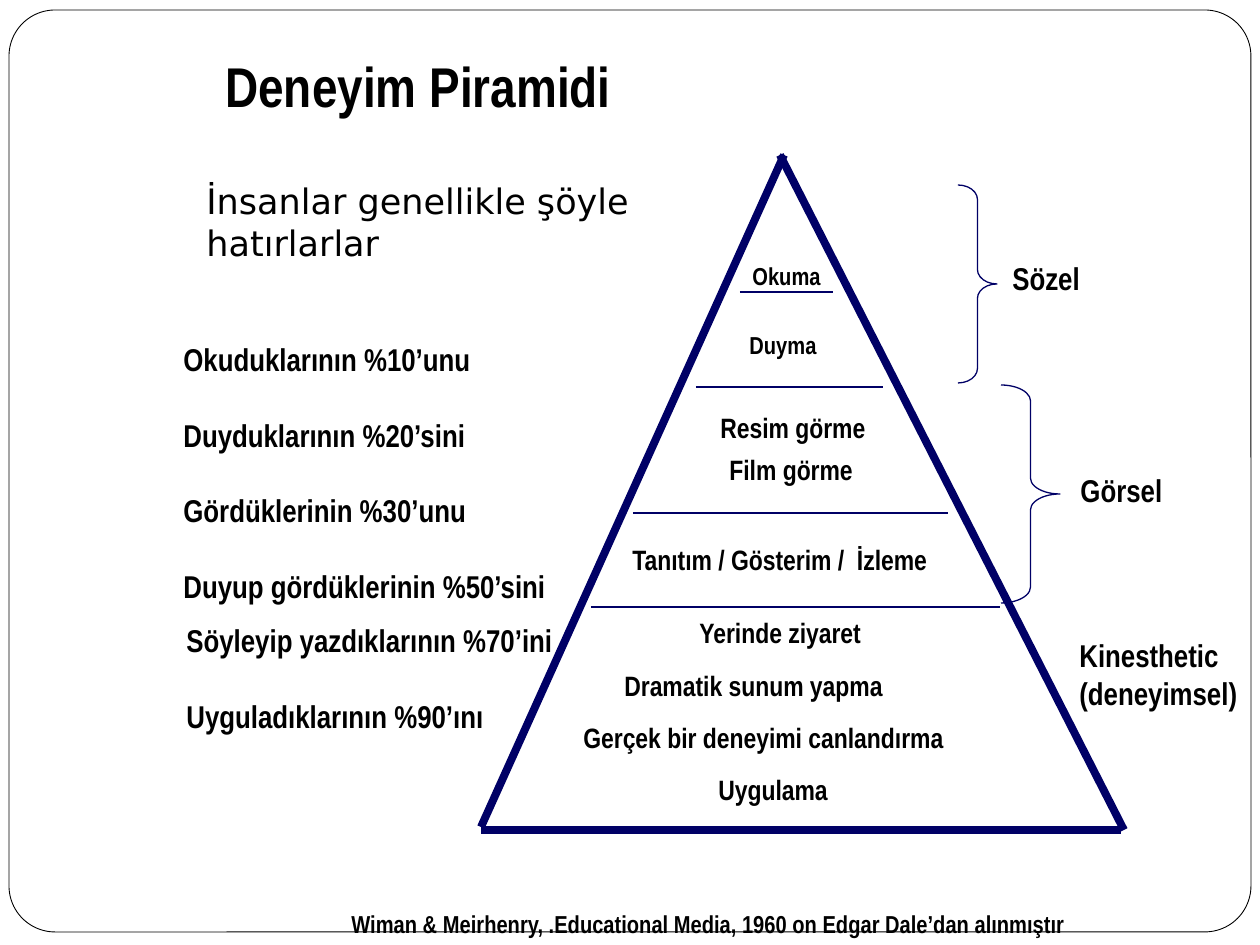
import pptx
import pptx.util
import pptx.dml.color
import pptx.enum.shapes
import pptx.enum.text
import pptx.oxml

SCALE = 914400 / 126  # EMU in one px
NAVY = "000066"
BLACK = "000000"
KIND = pptx.enum.shapes.MSO_SHAPE


def px(num):
    return pptx.util.Emu(round(num * SCALE))


def color(code):
    return pptx.dml.color.RGBColor.from_string(code)


def stroke(item, code, width):
    item.line.color.rgb = color(code)
    item.line.width = pptx.util.Pt(width)


def line(slide, start, end, width):
    item = slide.shapes.add_connector(
        pptx.enum.shapes.MSO_CONNECTOR.STRAIGHT, *map(px, start + end))
    stroke(item, NAVY, width)
    item._element.spPr.append(pptx.oxml.parse_xml(
        '<a:effectLst xmlns:a='
        '"http://schemas.openxmlformats.org/drawingml/2006/main"/>'))


def shape(slide, kind, area, code, width, adjust, fill=None):
    item = slide.shapes.add_shape(kind, *map(px, area))
    item.shadow.inherit = False
    for place, value in enumerate(adjust):
        item.adjustments[place] = value
    if fill:
        item.fill.solid()
        item.fill.fore_color.rgb = color(fill)
    else:
        item.fill.background()
    stroke(item, code, width)


def text(slide, area, rows, size, wrap=True, gap=0, font="Arial Narrow",
         bold=True, anchor="TOP"):
    frame = slide.shapes.add_textbox(*map(px, area)).text_frame
    frame.word_wrap = wrap
    frame.vertical_anchor = pptx.enum.text.MSO_ANCHOR[anchor]
    for place, words in enumerate(rows):
        para = frame.add_paragraph() if place else frame.paragraphs[0]
        if place:
            para.space_before = pptx.util.Pt(gap)
        run = para.add_run()
        run.text = words
        run.font.name = font
        run.font.size = pptx.util.Pt(size)
        run.font.bold = bold
        run.font.color.rgb = color(BLACK)


def main():
    deck = pptx.Presentation()
    deck.slide_width, deck.slide_height = px(1260), px(945)
    slide = deck.slides.add_slide(deck.slide_layouts[6])

    # Rounded frame
    shape(slide, KIND.ROUNDED_RECTANGLE, (9, 10, 1242, 922), BLACK, 0.5,
          [0.05], "FFFFFF")

    # Pyramid sides
    line(slide, (481, 830), (1121, 830), 4.5)
    line(slide, (1124, 830), (780, 155), 4.5)
    line(slide, (481, 827), (784, 155), 4.5)

    # Dividers between the levels
    for left, right, top in ((740, 833, 292), (696, 883, 387),
                             (633, 948, 513), (591, 1000, 607)):
        line(slide, (left, top), (right, top), 1)

    # Level labels
    for left, top, width, size, words in (
            (740, 255, 94, 14, "Okuma"),
            (737, 324, 93, 14, "Duyma"),
            (708, 404, 171, 16, "Resim görme"),
            (717, 446, 150, 16, "Film görme"),
            (620, 536, 323, 16, "Tanıtım / Gösterim /  İzleme"),
            (687, 609, 189, 16, "Yerinde ziyaret"),
            (612, 662, 286, 16, "Dramatik sunum yapma"),
            (571, 714, 388, 16, "Gerçek bir deneyimi canlandırma"),
            (706, 766, 136, 16, "Uygulama")):
        text(slide, (left, top, width, 46), [words], size, wrap=False)

    # Braces and the kinds of learning
    shape(slide, KIND.RIGHT_BRACE, (958, 185, 39, 198), NAVY, 0.75,
          [0.37, 0.5])
    shape(slide, KIND.RIGHT_BRACE, (1001, 385, 59, 218), NAVY, 0.75,
          [0.27, 0.5])
    text(slide, (1000, 253, 224, 50), ["Sözel"], 18)
    text(slide, (1068, 465, 169, 50), ["Görsel"], 18)
    text(slide, (1067, 630, 185, 88), ["Kinesthetic", "(deneyimsel)"], 18,
         wrap=False)

    # What people remember
    text(slide, (194, 175, 496, 95), ["İnsanlar genellikle şöyle hatırlarlar"],
         20, font="DejaVu Sans", bold=False, anchor="BOTTOM")
    text(slide, (171, 334, 435, 277),
         ["Okuduklarının %10’unu", "Duyduklarının %20’sini",
          "Gördüklerinin %30’unu", "Duyup gördüklerinin %50’sini"],
         18, gap=21.6)
    text(slide, (174, 615, 396, 126),
         ["Söyleyip yazdıklarının %70’ini", "Uyguladıklarının %90’ını"],
         18, gap=21.6)

    # Title and credit line
    text(slide, (213, 45, 993, 79), ["Deneyim Piramidi"], 32)
    text(slide, (339, 903, 811, 42),
         ["Wiman & Meirhenry, .Educational Media, 1960 on Edgar Dale’dan "
          "alınmıştır"], 14)

    deck.save("out.pptx")


if __name__ == "__main__":
    main()
